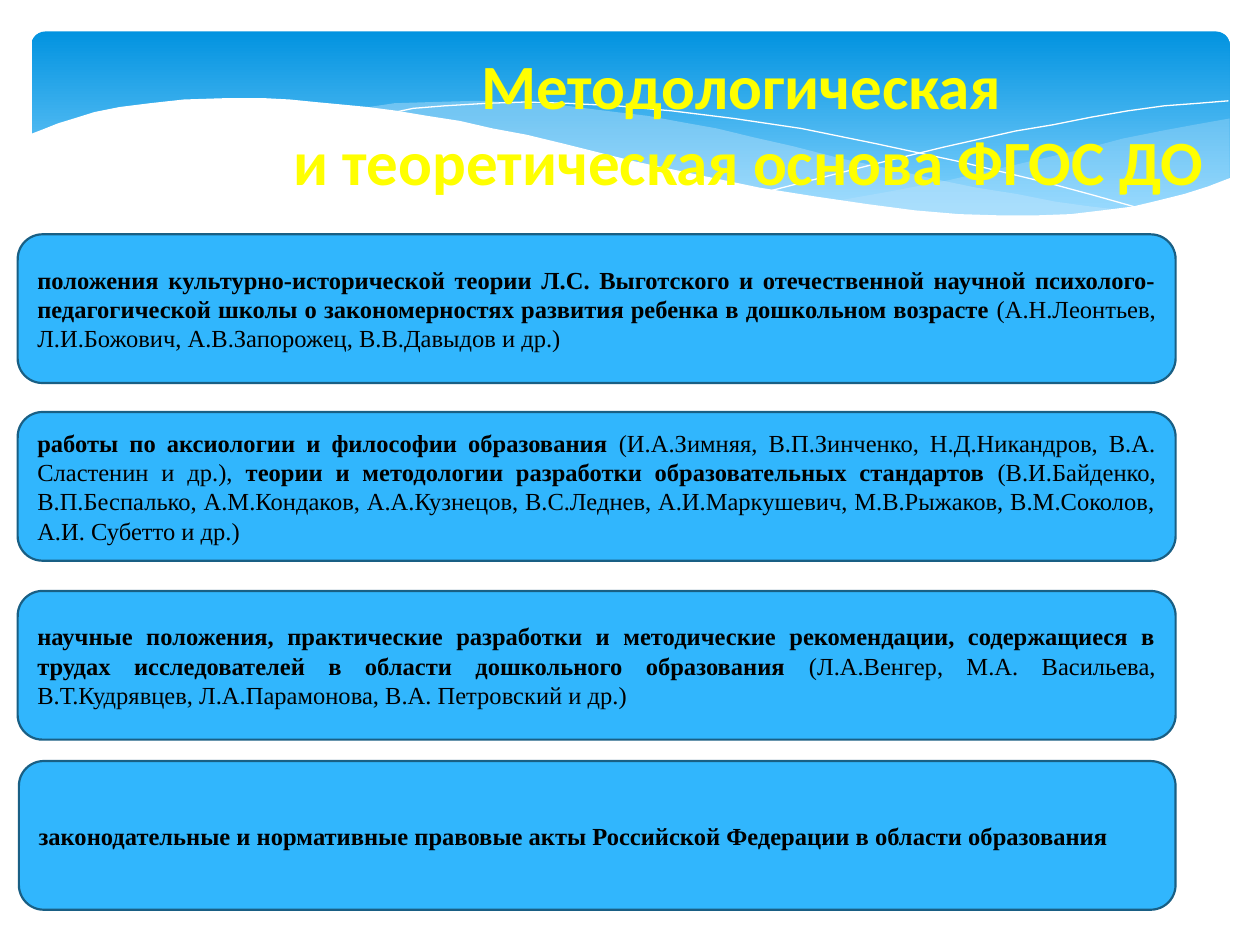
import lxml.etree
import pptx
import pptx.dml.color
import pptx.enum.shapes
import pptx.enum.text
import pptx.oxml.ns
import pptx.util

Inches = pptx.util.Inches
Pt = pptx.util.Pt
SHAPE = pptx.enum.shapes.MSO_SHAPE
ALIGN = pptx.enum.text.PP_ALIGN
ANCHOR = pptx.enum.text.MSO_ANCHOR

COLORS = {
    "sky": "0293E0",
    "pale": "83D3FE",
    "mist": "C6E7FC",
    "white": "FFFFFF",
    "title": "FFFF00",
    "card": "31B6FD",
    "edge": "195F84",
    "text": "000000",
}


def color(name):
    return pptx.dml.color.RGBColor.from_string(COLORS[name])


def draw(points, close):
    pen = slide.shapes.build_freeform(*points[0], scale=Inches(0.01))
    pen.add_line_segments(points[1:], close=close)
    shape = pen.convert_to_shape()
    shape.shadow.inherit = False
    return shape


deck = pptx.Presentation()
deck.slide_width = Inches(10)
deck.slide_height = Inches(7.5)
slide = deck.slides.add_slide(deck.slide_layouts[5])

banner = slide.shapes.add_shape(
    SHAPE.ROUNDED_RECTANGLE, Inches(0.25), Inches(0.25), Inches(9.51), Inches(1.56)
)
banner.adjustments[0] = 0.07
banner.shadow.inherit = False
banner.line.fill.background()
banner.fill.gradient()
banner.fill.gradient_angle = 270
for stop, name, place in zip(banner.fill.gradient_stops, ("sky", "pale"), (0, 0.9)):
    stop.color.rgb = color(name)
    stop.position = place

right = [
    (976, 94), (948, 99), (921, 104), (891, 110), (861, 118), (805, 131),
    (753, 143), (706, 152), (661, 160), (691, 164), (732, 168), (769, 171),
    (803, 172), (835, 172), (863, 170), (889, 166), (913, 162), (935, 156),
    (949, 152), (963, 147), (976, 141),
]
middle = [
    (893, 167), (866, 164), (837, 160), (807, 154), (775, 149), (741, 142),
    (706, 134), (668, 126), (629, 116), (598, 109), (569, 102), (541, 97),
    (514, 92), (489, 89), (465, 86), (442, 83), (420, 82), (380, 80),
    (344, 81), (313, 82), (286, 86), (323, 91), (362, 97), (404, 106),
    (449, 116), (491, 126), (530, 135), (566, 143), (601, 150), (634, 156),
    (665, 161), (695, 165), (722, 168), (748, 170), (773, 172), (796, 173),
    (818, 173), (838, 172), (857, 171), (876, 169),
]
falling = [
    (309, 90), (328, 86), (353, 84), (387, 82), (416, 81), (450, 82),
    (489, 84), (533, 88), (582, 94), (636, 102), (695, 114), (760, 128),
    (831, 145), (868, 155), (907, 166),
]
rising = [
    (613, 151), (652, 141), (695, 130), (748, 117), (806, 104), (836, 99),
    (866, 93), (895, 88), (924, 84), (951, 82), (975, 80),
]
front = [
    (977, 141), (959, 148), (940, 154), (920, 159), (899, 164), (875, 167),
    (850, 170), (823, 171), (793, 171), (761, 170), (726, 167), (688, 162),
    (647, 156), (603, 149), (555, 139), (503, 128), (447, 114), (418, 107),
    (391, 102), (365, 96), (339, 92), (315, 88), (292, 85), (271, 83),
    (250, 81), (230, 79), (211, 78), (177, 78), (146, 79), (119, 82),
    (95, 85), (75, 89), (59, 94), (46, 98), (36, 102), (23, 107),
    (23, 224), (977, 224),
]

for points, name, alpha in (right, "mist", 29), (middle, "mist", 40):
    wave = draw(points, True)
    wave.line.fill.background()
    wave.fill.solid()
    wave.fill.fore_color.rgb = color(name)
    tone = wave._element.spPr.find(".//" + pptx.oxml.ns.qn("a:srgbClr"))
    lxml.etree.SubElement(tone, pptx.oxml.ns.qn("a:alpha"), val=str(alpha * 1000))

for points in falling, rising:
    curve = draw(points, False)
    curve.fill.background()
    curve.line.color.rgb = color("white")
    curve.line.width = Pt(0)

cover = draw(front, True)
cover.line.fill.background()
cover.fill.solid()
cover.fill.fore_color.rgb = color("white")

title = slide.shapes.title
slide.shapes._spTree.append(title._element)
title.left, title.top = Inches(2.08), Inches(0.32)
title.width, title.height = Inches(7.72), Inches(1.31)
frame = title.text_frame
frame.text = "Методологическая \nи теоретическая основа ФГОС ДО"
frame.word_wrap = False
frame.auto_size = pptx.enum.text.MSO_AUTO_SIZE.NONE
frame.vertical_anchor = ANCHOR.TOP
for line in frame.paragraphs:
    line.alignment = ALIGN.CENTER
    font = line.runs[0].font
    font.name, font.size, font.bold = "Calibri", Pt(36), True
    font.color.rgb = color("title")

cards = [
    (0.14, 1.86, [
        "положения культурно-исторической теории Л.С. Выготского и отечественной научной психолого-педагогической школы о закономерностях развития ребенка в дошкольном возрасте ",
        "(А.Н.Леонтьев, Л.И.Божович, А.В.Запорожец, В.В.Давыдов и др.)",
    ]),
    (0.14, 3.27, [
        "работы по аксиологии и философии образования ",
        "(И.А.Зимняя, В.П.Зинченко, Н.Д.Никандров, В.А. Сластенин и др.),",
        " теории и методологии разработки образовательных стандартов ",
        "(В.И.Байденко, В.П.Беспалько, А.М.Кондаков, А.А.Кузнецов, B.C.Леднев, А.И.Маркушевич, М.В.Рыжаков, В.М.Соколов, А.И. Субетто и др.)",
    ]),
    (0.14, 4.69, [
        "научные положения, практические разработки и методические рекомендации, содержащиеся в трудах исследователей в области дошкольного образования ",
        "(Л.А.Венгер, М.А. Васильева, В.Т.Кудрявцев, Л.А.Парамонова, В.А. Петровский и др.)",
    ]),
    (0.15, 6.04, [
        "законодательные и нормативные правовые акты Российской Федерации в области образования",
    ]),
]
for left, top, parts in cards:
    card = slide.shapes.add_shape(
        SHAPE.ROUNDED_RECTANGLE, Inches(left), Inches(top), Inches(9.33 - left), Inches(1.18)
    )
    card.shadow.inherit = False
    card.fill.solid()
    card.fill.fore_color.rgb = color("card")
    card.line.color.rgb = color("edge")
    card.line.width = Pt(1.25)
    card.text_frame.word_wrap = True
    card.text_frame.vertical_anchor = ANCHOR.MIDDLE
    line = card.text_frame.paragraphs[0]
    line.alignment = ALIGN.JUSTIFY
    for index, part in enumerate(parts):
        run = line.add_run()
        run.text = part
        run.font.name, run.font.size = "Times New Roman", Pt(14)
        run.font.bold = index % 2 == 0
        run.font.color.rgb = color("text")

deck.save("out.pptx")
